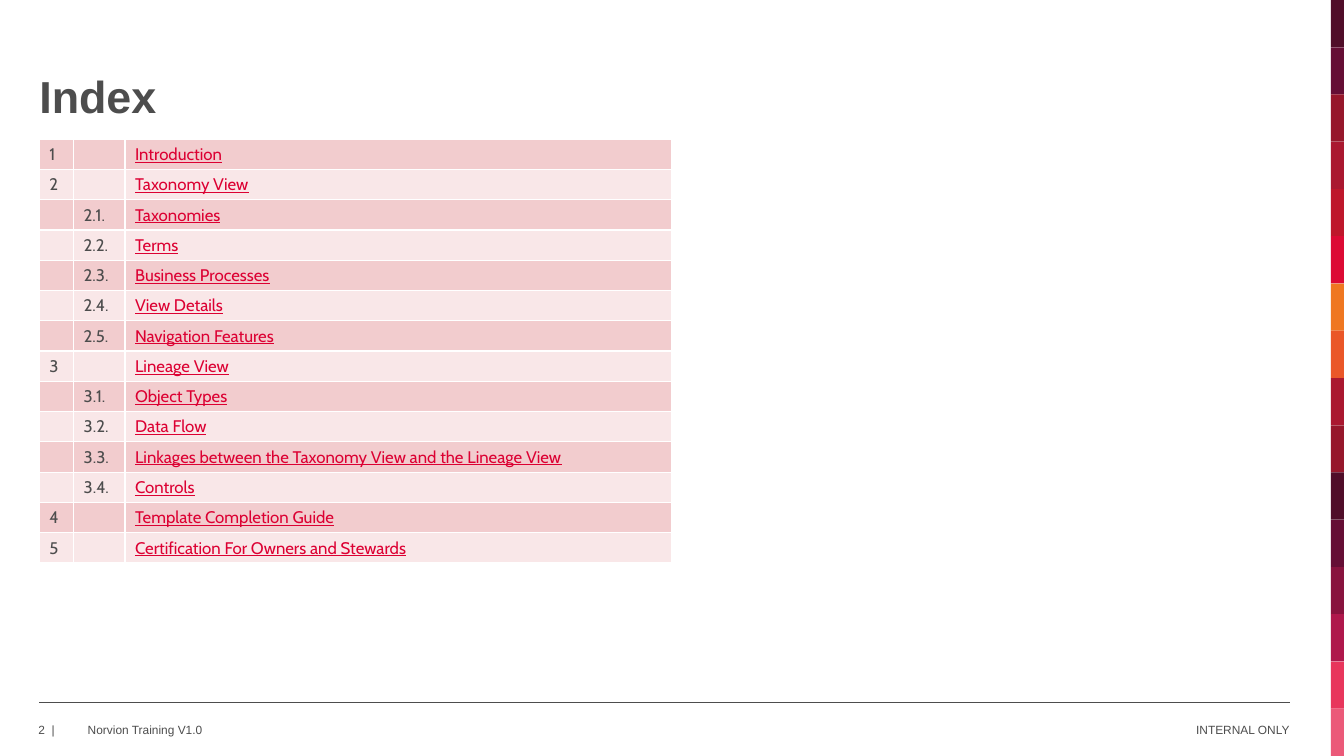
from typing import NamedTuple

from lxml.etree import SubElement
from pptx import Presentation
from pptx.dml.color import RGBColor
from pptx.enum.shapes import MSO_CONNECTOR, MSO_SHAPE
from pptx.enum.text import MSO_ANCHOR as Anchor, PP_ALIGN as Align
from pptx.oxml.ns import qn
from pptx.util import Inches, Pt

GREY, RED, WHITE = "4D4D4D", "DC0032", "FFFFFF"
ROW_FILLS = ("F2CCCE", "F9E7E8")
COLS = (0.34, 0.51, 5.42)
ROW_H = 0.3
STRIP = (
    "500D29", "650E35", "96172B", "AA1830", "BE172B", "DC0A34", "EF7721", "EA5728",
    "AA1830", "96172B", "500D29", "650E35", "88133E", "AF184C", "E8365C", "EB5A79",
)


class Entry(NamedTuple):
    number: str
    name: str


class Label(NamedTuple):
    text: str
    left: float
    width: float
    align: Align


ENTRIES = (
    Entry("1", "Introduction"),
    Entry("2", "Taxonomy View"),
    Entry("2.1.", "Taxonomies"),
    Entry("2.2.", "Terms"),
    Entry("2.3.", "Business Processes"),
    Entry("2.4.", "View Details"),
    Entry("2.5.", "Navigation Features"),
    Entry("3", "Lineage View"),
    Entry("3.1.", "Object Types"),
    Entry("3.2.", "Data Flow"),
    Entry("3.3.", "Linkages between the Taxonomy View and the Lineage View"),
    Entry("3.4.", "Controls"),
    Entry("4", "Template Completion Guide"),
    Entry("5", "Certification For Owners and Stewards"),
)
LABELS = (
    Label("2  |", 0.38, 0.44, Align.LEFT),
    Label("Norvion Training V1.0", 0.87, 5.51, Align.LEFT),
    Label("INTERNAL ONLY", 7.28, 5.51, Align.RIGHT),
)


def paint(target, color: str) -> None:
    """Give a fill or a line one solid colour."""
    target.solid()
    target.fore_color.rgb = RGBColor.from_string(color)


def add_run(para, text: str, size: float, face: str = "Arial", color: str = GREY,
            bold: bool = False, under: bool = False) -> None:
    run = para.add_run()
    run.text = text
    font = run.font
    font.size, font.name = Pt(size), face
    font.bold, font.underline = bold, under
    font.color.rgb = RGBColor.from_string(color)


def set_frame(frame, anchor: Anchor, left: float = 0, top: float = 0,
              right: float = 0, bottom: float = 0) -> None:
    frame.word_wrap = True
    frame.vertical_anchor = anchor
    frame.margin_left, frame.margin_top = Inches(left), Inches(top)
    frame.margin_right, frame.margin_bottom = Inches(right), Inches(bottom)


def add_strip(slide) -> None:
    step = 7.5 / len(STRIP)
    for i, color in enumerate(STRIP):
        block = slide.shapes.add_shape(
            MSO_SHAPE.RECTANGLE, Inches(13.2), Inches(i * step), Inches(0.13), Inches(step))
        block.shadow.inherit = False
        paint(block.fill, color)
        block.line.fill.background()


def add_footer(slide) -> None:
    y = Inches(6.97)
    rule = slide.shapes.add_connector(MSO_CONNECTOR.STRAIGHT, Inches(0.39), y, Inches(12.79), y)
    rule.line.width = Pt(1)
    paint(rule.line.fill, GREY)
    SubElement(rule._element.spPr, qn("a:effectLst"))
    for label in LABELS:
        box = slide.shapes.add_textbox(
            Inches(label.left), Inches(7.15), Inches(label.width), Inches(0.17))
        set_frame(box.text_frame, Anchor.MIDDLE)
        para = box.text_frame.paragraphs[0]
        para.alignment = label.align
        add_run(para, label.text, 8.5)


def add_title(slide) -> None:
    title = slide.shapes.title
    title.left, title.top = Inches(0.39), Inches(0.49)
    title.width, title.height = Inches(12.4), Inches(0.78)
    set_frame(title.text_frame, Anchor.BOTTOM, 0, 0.05, 0.1, 0.05)
    para = title.text_frame.paragraphs[0]
    para.alignment, para.line_spacing = Align.LEFT, 0.9
    add_run(para, "Index", 32, bold=True)


def style_cell(cell, color: str) -> None:
    """Set white borders, the fill, and a small height for empty text."""
    props = cell._tc.get_or_add_tcPr()
    for side in ("lnL", "lnR", "lnT", "lnB"):
        edge = SubElement(props, qn(f"a:{side}"), w=str(Pt(1)))
        fill = SubElement(edge, qn("a:solidFill"))
        SubElement(fill, qn("a:srgbClr"), val=WHITE)
    paint(cell.fill, color)
    SubElement(cell.text_frame.paragraphs[0]._p, qn("a:endParaRPr"), sz="1200")


def add_index(slide) -> None:
    count = len(ENTRIES)
    table = slide.shapes.add_table(
        count, len(COLS), Inches(0.39), Inches(1.38),
        Inches(sum(COLS)), Inches(count * ROW_H)).table
    for col, width in zip(table.columns, COLS):
        col.width = Inches(width)
    for i, entry in enumerate(ENTRIES):
        table.rows[i].height = Inches(ROW_H)
        level = 1 if "." in entry.number else 0
        cells = [table.cell(i, j) for j in range(len(COLS))]
        for cell in cells:
            style_cell(cell, ROW_FILLS[i % 2])
        add_run(cells[level].text_frame.paragraphs[0], entry.number, 12, "Cabin")
        add_run(cells[2].text_frame.paragraphs[0], entry.name, 12, "Cabin", RED, under=True)


def main() -> None:
    deck = Presentation()
    deck.slide_width, deck.slide_height = Inches(13.33), Inches(7.5)
    slide = deck.slides.add_slide(deck.slide_layouts[5])
    paint(slide.background.fill, WHITE)
    add_strip(slide)
    add_footer(slide)
    add_title(slide)
    add_index(slide)
    deck.save("out.pptx")


if __name__ == "__main__":
    main()
